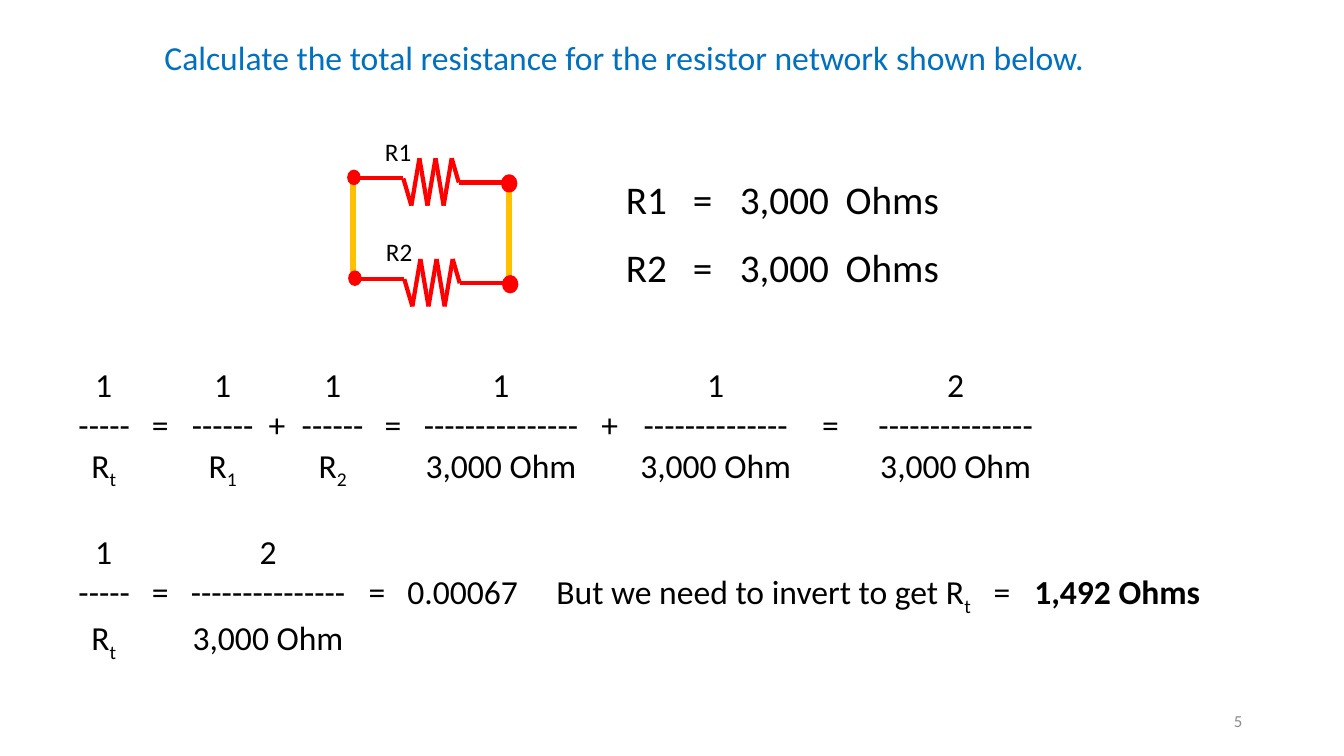
import pptx
import pptx.dml.color
import pptx.enum.shapes
import pptx.enum.text
import pptx.oxml
import pptx.oxml.ns
import pptx.util
from dataclasses import dataclass

Inches = pptx.util.Inches
ALIGN = pptx.enum.text.PP_ALIGN
ANCHOR = pptx.enum.text.MSO_ANCHOR


@dataclass
class Theme:
    font: str = "Calibri"
    text: str = "000000"
    title: str = "0070C0"
    wire: str = "FFC000"
    resistor: str = "FF0000"
    number: str = "8C8C8C"
    given_size: int = 28
    body_size: int = 24
    label_size: int = 18
    number_size: int = 12


def rgb(value):
    return pptx.dml.color.RGBColor.from_string(value)


class SlideBuilder:
    def __init__(self, slide, theme):
        self.s = slide
        self.theme = theme

    def style(self, r, size, color):
        r.font.name = self.theme.font
        r.font.size = pptx.util.Pt(size)
        r.font.color.rgb = rgb(color)

    def title(self, text, box):
        sp = self.s.shapes.title
        sp.left, sp.top, sp.width, sp.height = map(Inches, box)
        tf = sp.text_frame
        tf.text = text
        tf.auto_size = pptx.enum.text.MSO_AUTO_SIZE.NONE
        tf.vertical_anchor = ANCHOR.TOP
        p = tf.paragraphs[0]
        p.alignment = ALIGN.LEFT
        self.style(p.runs[0], self.theme.body_size, self.theme.title)

    def text(self, text, box, size, color=None, align=ALIGN.LEFT,
             anchor=ANCHOR.TOP, tabs=()):
        sp = self.s.shapes.add_textbox(*map(Inches, box))
        tf = sp.text_frame
        tf.word_wrap = True
        tf.vertical_anchor = anchor
        p = tf.paragraphs[0]
        p.text = text
        p.alignment = align
        self.tab_stops(p, tabs)
        for r in p.runs:
            self.style(r, size, color or self.theme.text)

    def tab_stops(self, p, tabs):
        """Tabs are (position in inches, "l" or "ctr") pairs."""
        if not tabs:
            return
        tab_list = pptx.oxml.parse_xml(
            "<a:tabLst %s/>" % pptx.oxml.ns.nsdecls("a"))
        for position, kind in tabs:
            tab = tab_list.makeelement(pptx.oxml.ns.qn("a:tab"))
            tab.set("pos", str(Inches(position)))
            tab.set("algn", kind)
            tab_list.append(tab)
        p._p.get_or_add_pPr().append(tab_list)

    def equations(self, blocks, box, gap):
        """Each block is (tabs, rows); in a row _x_ is subscript, *x* bold."""
        tf = self.s.shapes.add_textbox(*map(Inches, box)).text_frame
        tf.word_wrap = True
        p = None
        for tabs, rows in blocks:
            for i, row in enumerate(rows):
                first = p is None
                p = tf.paragraphs[0] if first else tf.add_paragraph()
                if i == 0 and not first:
                    p.space_before = pptx.util.Pt(gap)
                self.tab_stops(p, tabs)
                self.marked_runs(p, row)

    def marked_runs(self, p, row):
        for i, part in enumerate(row.replace("*", "_*").split("_")):
            if not part.strip("*"):
                continue
            r = p.add_run()
            r.text = part.strip("*")
            self.style(r, self.theme.body_size, self.theme.text)
            if part.startswith("*"):
                r.font.bold = True
            elif i % 2:
                r.font._element.set("baseline", "-25000")

    def line(self, start, end, color, width):
        c = self.s.shapes.add_connector(
            pptx.enum.shapes.MSO_CONNECTOR.STRAIGHT,
            *map(Inches, (*start, *end)))
        c.line.color.rgb = rgb(color)
        c.line.width = pptx.util.Pt(width)
        c._element.spPr.append(pptx.oxml.parse_xml(
            "<a:effectLst %s/>" % pptx.oxml.ns.nsdecls("a")))

    def node(self, x, y, width):
        sp = self.s.shapes.add_shape(
            pptx.enum.shapes.MSO_SHAPE.OVAL,
            *map(Inches, (x, y, 0.12, 0.14)))
        sp.shadow.inherit = False
        sp.fill.solid()
        sp.fill.fore_color.rgb = rgb(self.theme.resistor)
        sp.line.color.rgb = rgb(self.theme.resistor)
        sp.line.width = pptx.util.Pt(width)

    def resistor(self, name, x, y):
        """Leads and zigzag between two nodes; x, y is the left lead's start."""
        peaks = [(x + 0.51 + 0.08 * i, y + (-0.2 if i % 2 else 0.27))
                 for i in range(6)]
        points = [(x, y), (x + 0.43, y), *peaks,
                  (x + 0.98, y + 0.04), (x + 1.42, y + 0.04)]
        for start, end in zip(points, points[1:]):
            self.line(start, end, self.theme.resistor, 3)
        self.node(x + 1.42, y - 0.02, 3)
        self.node(x - 0.12, y - 0.08, 1)
        self.text(name, (x + 0.15, y - 0.47, 0.47, 0.4),
                  self.theme.label_size)


def main():
    prs = pptx.Presentation()
    prs.slide_width, prs.slide_height = Inches(13.33), Inches(7.5)
    theme = Theme()
    b = SlideBuilder(prs.slides.add_slide(prs.slide_layouts[5]), theme)

    # Title
    b.title("Calculate the total resistance for the resistor network "
            "shown below.", (1.53, 0.32, 9.71, 0.5))

    # Given values
    given_tabs = [(0.76, "ctr"), (1.13, "l"), (2.18, "l")]
    for i, name in enumerate(("R1", "R2")):
        b.text(f"{name}\t=\t3,000\tOhms", (6.11, 1.69 + 0.67 * i, 3.65, 0.57),
               theme.given_size, tabs=given_tabs)

    # Parallel circuit
    b.line((5.05, 2.87), (5.05, 1.88), theme.wire, 4.5)
    b.line((3.5, 2.73), (3.5, 1.83), theme.wire, 4.5)
    for i, name in enumerate(("R1", "R2")):
        b.resistor(name, 3.57 + 0.01 * i, 1.77 + i)

    # Worked solution, each term centred on its tab stop
    sum_tabs = [(x, "ctr") for x in (0.25, 0.81, 1.43, 1.97, 2.52, 3.12,
                                     4.19, 5.27, 6.32, 7.46, 8.7)]
    result_tabs = [(x, "ctr") for x in (0.25, 0.81, 1.88, 2.96, 3.81)]
    result_tabs += [(4.74, "l"), (9.16, "ctr"), (9.48, "l")]
    sum_rows = [
        "\t1\t\t1\t\t1\t\t1\t\t1\t\t2",
        "\t-----\t=\t------\t+\t------\t=\t---------------\t+"
        "\t--------------\t=\t---------------",
        "\tR_t_\t\tR_1_\t\tR_2_\t\t3,000 Ohm\t\t3,000 Ohm\t\t3,000 Ohm",
    ]
    result_rows = [
        "\t1\t\t2",
        "\t-----\t=\t---------------\t=\t0.00067"
        "\tBut we need to invert to get R_t_\t=\t*1,492 Ohms",
        "\tR_t_\t\t3,000 Ohm",
    ]
    b.equations([(sum_tabs, sum_rows), (result_tabs, result_rows)],
                (0.68, 3.56, 12.31, 2.93), gap=29)

    # Slide number
    b.text("5", (9.42, 6.95, 3, 0.4), theme.number_size, theme.number,
           ALIGN.RIGHT, ANCHOR.MIDDLE)

    prs.save("out.pptx")


if __name__ == "__main__":
    main()
